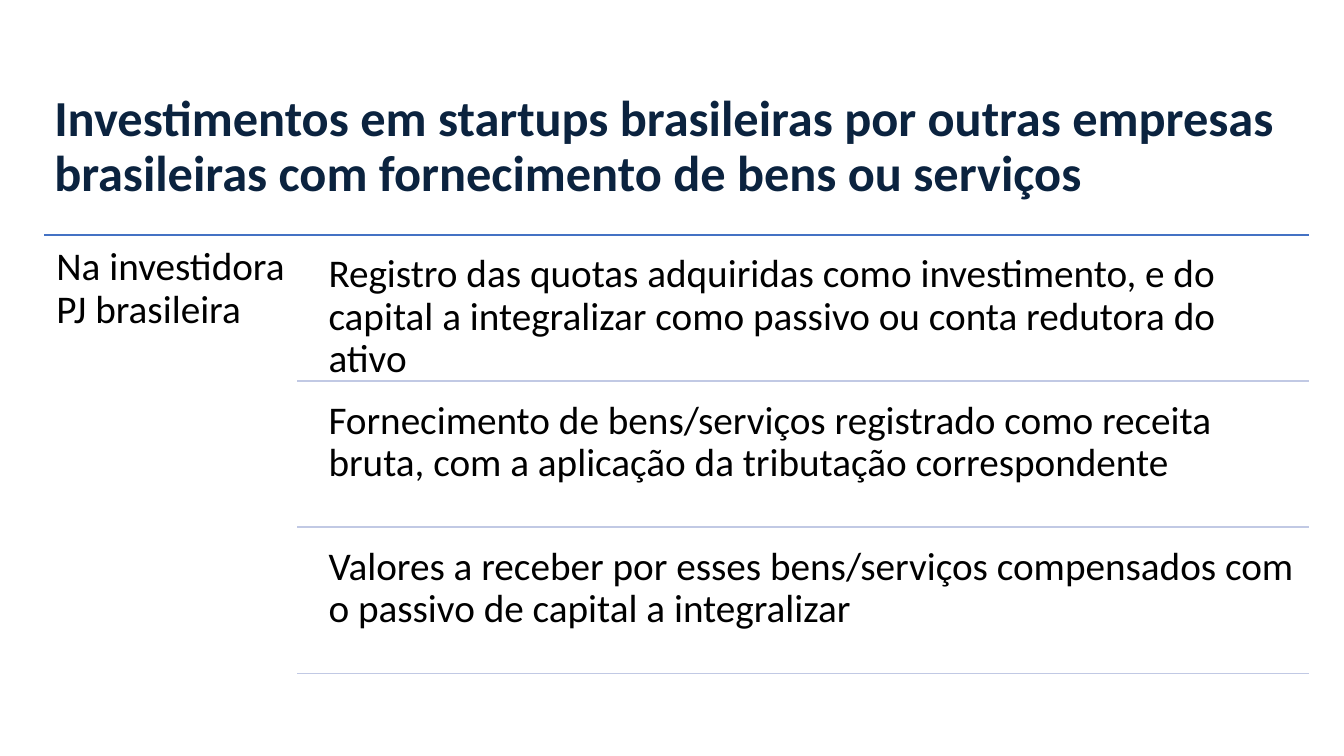
from lxml import etree
from pptx import Presentation
from pptx.dml.color import RGBColor
from pptx.enum.shapes import MSO_CONNECTOR
from pptx.enum.text import MSO_ANCHOR
from pptx.oxml.ns import qn
from pptx.util import Inches, Pt

STRAIGHT = MSO_CONNECTOR.STRAIGHT
TOP = MSO_ANCHOR.TOP
MIDDLE = MSO_ANCHOR.MIDDLE

FONT = "Calibri"
NAVY = "0B233F"
BLACK = "000000"
BLUE = "4472C4"
PALE_BLUE = "C1C9E4"

TITLE = ("Investimentos em startups brasileiras por outras empresas "
         "brasileiras com fornecimento de bens ou serviços")
INVESTOR = "Na investidora PJ brasileira"
STEPS = [
    "Registro das quotas adquiridas como investimento, e do capital a "
    "integralizar como passivo ou conta redutora do ativo",
    "Fornecimento de bens/serviços registrado como receita bruta, com a "
    "aplicação da tributação correspondente",
    "Valores a receber por esses bens/serviços compensados com o passivo "
    "de capital a integralizar",
]


def color(hex_value):
    return RGBColor.from_string(hex_value)


def add_text(slide, box, text, size=28, font_color=BLACK, bold=False,
             anchor=TOP, inset=0.12):
    shape = slide.shapes.add_textbox(*(Inches(value) for value in box))
    frame = shape.text_frame
    frame.word_wrap = True
    frame.vertical_anchor = anchor
    frame.margin_left = frame.margin_right = Inches(inset)
    frame.margin_top = frame.margin_bottom = Inches(inset)
    frame.text = text
    paragraph = frame.paragraphs[0]
    paragraph.line_spacing = 0.9
    font = paragraph.runs[0].font
    font.name = FONT
    font.size = Pt(size)
    font.bold = bold
    font.color.rgb = color(font_color)


def add_rule(slide, left, right, top, line_color):
    """Draw a thin horizontal line without a shadow."""
    rule = slide.shapes.add_connector(
        STRAIGHT, Inches(left), Inches(top), Inches(right), Inches(top))
    rule.line.color.rgb = color(line_color)
    rule.line.width = Pt(1)
    etree.SubElement(rule._element.spPr, qn("a:effectLst"))


def add_title(slide, box):
    add_text(slide, box, TITLE, size=36, font_color=NAVY, bold=True,
             anchor=MIDDLE, inset=0.1)


def add_investor_steps(slide, left, top, width, height):
    """Place the investor label beside its steps, each closed by a rule."""
    label_width = width * 0.2
    text_offset = 0.19
    row_gap = 0.07
    row_height = 1.38
    right = left + width
    rule_left = left + label_width
    text_left = rule_left + text_offset

    add_rule(slide, left, right, top, BLUE)
    add_text(slide, (left, top, label_width, height), INVESTOR)
    for index, step in enumerate(STEPS):
        row_top = top + row_gap + index * (row_gap + row_height)
        add_text(slide, (text_left, row_top, right - text_left, row_height), step)
        add_rule(slide, rule_left, right, row_top + row_height, PALE_BLUE)


def main():
    presentation = Presentation()
    presentation.slide_width = Inches(13.33)
    presentation.slide_height = Inches(7.5)
    slide = presentation.slides.add_slide(presentation.slide_layouts[6])
    add_title(slide, (0.44, 0.93, 12.53, 1.07))
    add_investor_steps(slide, 0.44, 2.33, 12.54, 4.43)
    presentation.save("out.pptx")


if __name__ == "__main__":
    main()
